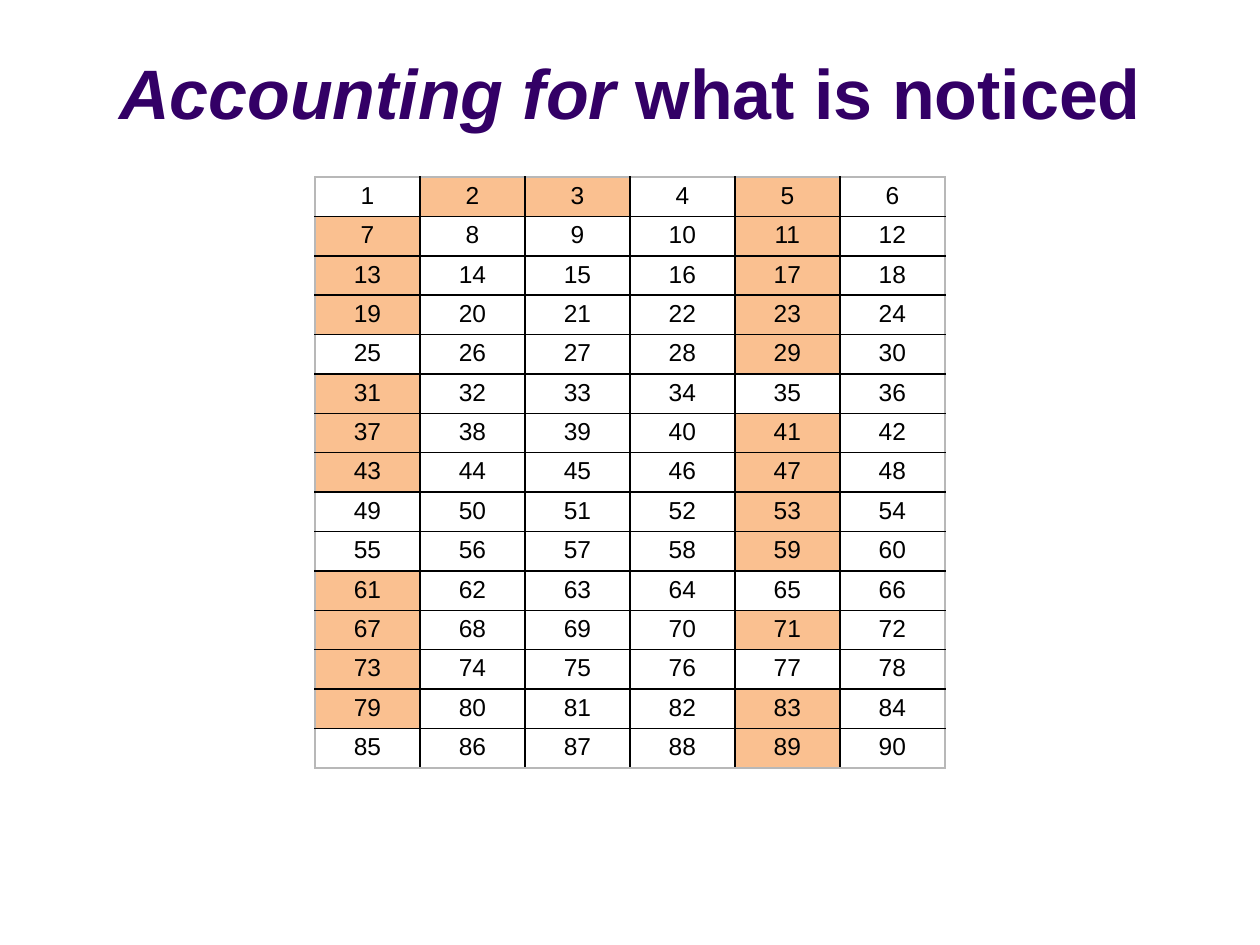
from lxml import etree
from pptx import Presentation
from pptx.dml.color import RGBColor
from pptx.enum.text import MSO_ANCHOR, PP_ALIGN
from pptx.oxml.ns import qn
from pptx.util import Pt

"""Build a slide with the numbers 1 to 90 in six columns, primes shaded."""

EMU_PER_PX = 914400 / 126
CENTER = PP_ALIGN.CENTER
MIDDLE = MSO_ANCHOR.MIDDLE
FONT = "Arial"
PURPLE = RGBColor(0x33, 0x00, 0x66)
BLACK = RGBColor(0x00, 0x00, 0x00)
GRAY = RGBColor(0xB8, 0xB8, 0xB8)
ORANGE = RGBColor(0xFA, 0xC0, 0x90)
ROWS, COLUMNS = 15, 6


def px(length):
    """Turn pixels into EMU."""
    return round(length * EMU_PER_PX)


def is_prime(number):
    """Tell whether a number is prime."""
    return number > 1 and all(number % divisor for divisor in range(2, int(number ** 0.5) + 1))


def style_paragraph(paragraph, size, color):
    """Centre a paragraph and set its font."""
    paragraph.alignment = CENTER
    paragraph.font.name = FONT
    paragraph.font.size = Pt(size)
    paragraph.font.color.rgb = color


def add_title(slide, emphasized, plain):
    """Add the bold title with its italic opening."""
    box = slide.shapes.add_textbox(px(63), px(38), px(1134), px(107))
    frame = box.text_frame
    frame.word_wrap = True
    frame.vertical_anchor = MIDDLE
    paragraph = frame.paragraphs[0]
    style_paragraph(paragraph, 40, PURPLE)
    paragraph.font.bold = True
    for text, italic in ((emphasized, True), (plain, False)):
        run = paragraph.add_run()
        run.text = text
        run.font.italic = italic


def set_borders(cell, colors):
    """Draw the left, right, top and bottom borders of a cell."""
    properties = cell._tc.get_or_add_tcPr()
    for index, (side, color) in enumerate(zip("LRTB", colors)):
        line = etree.Element(qn(f"a:ln{side}"), w=str(Pt(1)))
        fill = etree.SubElement(line, qn("a:solidFill"))
        etree.SubElement(fill, qn("a:srgbClr"), val=str(color))
        properties.insert(index, line)


def fill_cell(cell, number):
    """Write a number in a cell and shade it if prime."""
    cell.margin_left = cell.margin_right = px(9)
    cell.margin_top = cell.margin_bottom = px(5)
    paragraph = cell.text_frame.paragraphs[0]
    paragraph.text = str(number)
    style_paragraph(paragraph, 14, BLACK)
    if is_prime(number):
        cell.fill.solid()
        cell.fill.fore_color.rgb = ORANGE
    else:
        cell.fill.background()


def add_number_grid(slide):
    """Add the table of consecutive numbers."""
    frame = slide.shapes.add_table(ROWS, COLUMNS, px(315), px(177), px(630), px(591))
    table = frame.table
    table.first_row = table.horz_banding = False
    for row in range(ROWS):
        for column in range(COLUMNS):
            cell = table.cell(row, column)
            fill_cell(cell, row * COLUMNS + column + 1)
            outer = (column == 0, column == COLUMNS - 1, row == 0, row == ROWS - 1)
            set_borders(cell, [GRAY if edge else BLACK for edge in outer])


def main():
    """Build and save the slide."""
    presentation = Presentation()
    presentation.slide_width = px(1260)
    presentation.slide_height = px(945)
    slide = presentation.slides.add_slide(presentation.slide_layouts[6])
    add_title(slide, "Accounting for", " what is noticed")
    add_number_grid(slide)
    presentation.save("out.pptx")


if __name__ == "__main__":
    main()
